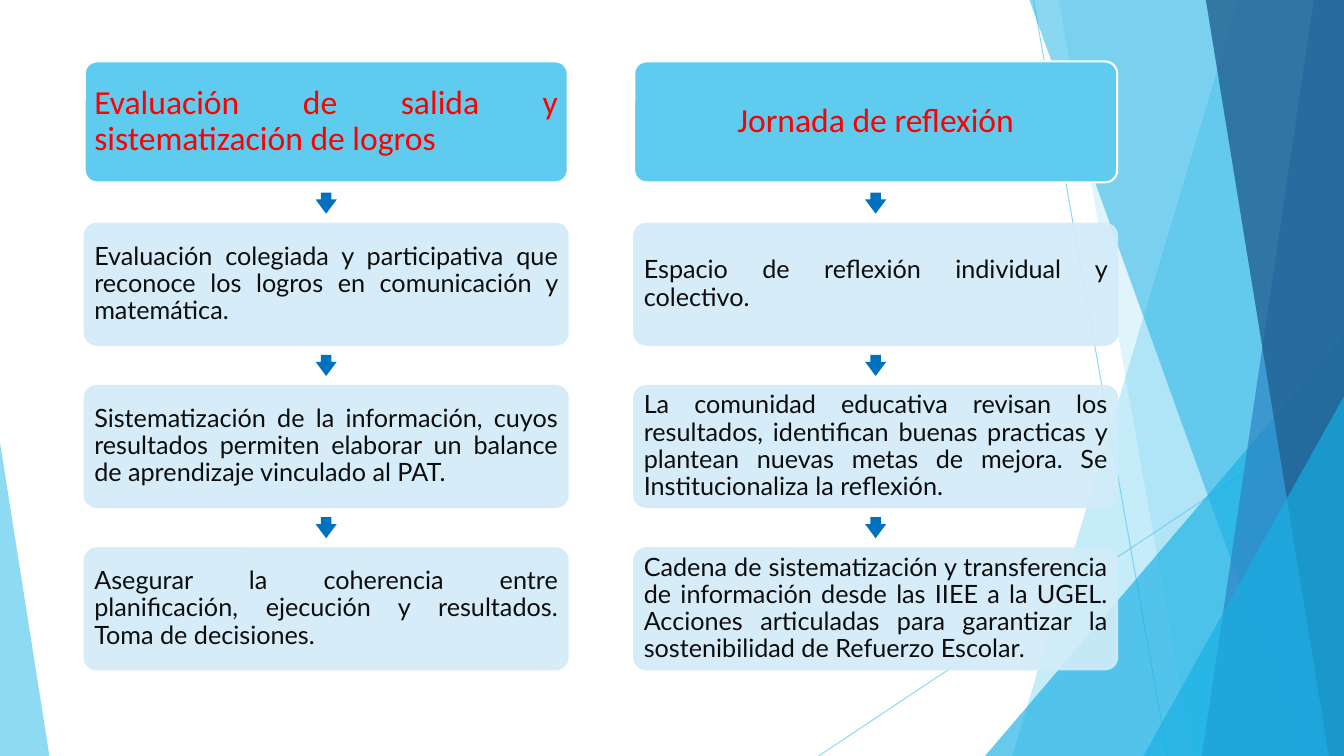
import pptx
import pptx.dml.color
import pptx.enum.shapes
import pptx.enum.text
import pptx.oxml
import pptx.oxml.ns
import pptx.util
from dataclasses import dataclass

Inches, Pt = pptx.util.Inches, pptx.util.Pt
SHAPE = pptx.enum.shapes.MSO_SHAPE
ALIGN = pptx.enum.text.PP_ALIGN


@dataclass(frozen=True)
class Theme:
    sky: str = "5FCBEF"
    cyan: str = "17B0E4"
    blue: str = "2E83C3"
    navy: str = "226292"
    pale: str = "D2ECF9"
    white: str = "FFFFFF"
    arrow: str = "0070C0"
    head_text: str = "FF0000"
    body_text: str = "0D0D0D"
    head_font: str = "Calibri"
    body_font: str = "Lato"
    head_size: int = 24
    body_size: int = 18


class SlideBuilder:
    def __init__(self, s, theme):
        self.s, self.theme = s, theme

    def paint(self, fill, color, opacity=100):
        """Apply a solid colour with opacity in percent."""
        fill.solid()
        fill.fore_color.rgb = pptx.dml.color.RGBColor.from_string(color)
        if opacity < 100:
            clr = fill._xPr.find(".//" + pptx.oxml.ns.qn("a:srgbClr"))
            alpha = clr.makeelement(pptx.oxml.ns.qn("a:alpha"), {"val": str(opacity * 1000)})
            clr.append(alpha)

    def finish(self, sp, color, opacity=100):
        sp.shadow.inherit = False
        self.paint(sp.fill, color, opacity)
        sp.line.fill.background()
        return sp

    def line(self, start, end):
        ends = [Inches(v) for v in (*start, *end)]
        c = self.s.shapes.add_connector(pptx.enum.shapes.MSO_CONNECTOR.STRAIGHT, *ends)
        c.line.width = Pt(0.75)
        self.paint(c.line.fill, self.theme.sky, 70)
        spPr = c._element.spPr
        spPr.append(spPr.makeelement(pptx.oxml.ns.qn("a:effectLst"), {}))

    def polygon(self, points, color, opacity):
        pts = [(Inches(x), Inches(y)) for x, y in points]
        fb = self.s.shapes.build_freeform(*pts[0])
        fb.add_line_segments(pts[1:], close=True)
        self.finish(fb.convert_to_shape(), color, opacity)

    def preset(self, kind, box, adjustments, color, opacity=100):
        sp = self.s.shapes.add_shape(kind, *[Inches(v) for v in box])
        for i, value in enumerate(adjustments):
            sp.adjustments[i] = value
        return self.finish(sp, color, opacity)

    def card(self, box, text, heading, align):
        t = self.theme
        color, opacity, edge = (t.sky, 100, t.white) if heading else (t.pale, 90, t.pale)
        sp = self.preset(SHAPE.ROUNDED_RECTANGLE, box, [0.1], color, opacity)
        sp.line.width = Pt(1.5)
        self.paint(sp.line.fill, edge, opacity)
        tf = sp.text_frame
        tf.word_wrap = True
        tf.vertical_anchor = pptx.enum.text.MSO_ANCHOR.MIDDLE
        tf.margin_left = tf.margin_right = Inches(0.06)
        tf.margin_top = tf.margin_bottom = Inches(0.03)
        p = tf.paragraphs[0]
        p.text = text
        p.alignment = align
        p.line_spacing = 0.9
        p.font.name = t.head_font if heading else t.body_font
        p.font.size = Pt(t.head_size if heading else t.body_size)
        p.font.color.rgb = pptx.dml.color.RGBColor.from_string(
            t.head_text if heading else t.body_text)

    def backdrop(self):
        t = self.theme
        right, bottom = 13.33, 7.5
        self.line((10.25, 0), (11.58, bottom))
        self.line((right, 4.03), (8.12, bottom))

        def band(top_x, bottom_x, color, opacity):
            """Fill from a slanted left edge to the right side of the slide."""
            self.polygon([(top_x, 0), (right, 0), (right, bottom), (bottom_x, bottom)],
                         color, opacity)

        def corner(left, top, width, apex, color, opacity):
            self.preset(SHAPE.ISOSCELES_TRIANGLE, (left, top, width, bottom - top),
                        [apex], color, opacity)

        band(12.28, 10.04, t.sky, 36)
        band(10.5, 11.83, t.sky, 20)
        corner(9.77, 3.33, 3.56, 1, t.cyan, 66)
        band(10.21, 12.91, t.cyan, 50)
        band(13.03, 11.92, t.blue, 70)
        band(11.96, 13.18, t.navy, 80)
        corner(11.34, 3.93, 1.99, 1, t.cyan, 66)
        corner(0, 4.39, 0.49, 0, t.sky, 70)

    def flow(self, left, texts, head_align):
        """Stack a heading and its steps, joined by down arrows."""
        top, pitch, width, height, arrow = 0.61, 1.61, 4.79, 1.2, 0.21
        for i, text in enumerate(texts):
            y = top + i * pitch
            if i:
                gap = pitch - height
                self.preset(SHAPE.DOWN_ARROW,
                            (left + (width - arrow) / 2, y - (gap + arrow) / 2, arrow, arrow),
                            [0.5, 0.67], self.theme.arrow)
            self.card((left, y, width, height), text, i == 0,
                      ALIGN.JUSTIFY if i else head_align)


FLOWS = [
    (0.84, ALIGN.JUSTIFY, [
        "Evaluación de salida y sistematización de logros",
        "Evaluación colegiada y participativa que reconoce los logros en comunicación "
        "y matemática.",
        "Sistematización de la información, cuyos resultados permiten elaborar un balance "
        "de aprendizaje vinculado al PAT.",
        "Asegurar la coherencia entre planificación, ejecución y resultados. "
        "Toma de decisiones.",
    ]),
    (6.29, ALIGN.CENTER, [
        "Jornada de reflexión",
        "Espacio de reflexión individual y colectivo.",
        "La comunidad educativa revisan los resultados, identifican buenas practicas y "
        "plantean nuevas metas de mejora. Se Institucionaliza la reflexión.",
        "Cadena de sistematización y transferencia de información desde las IIEE a la UGEL. "
        "Acciones articuladas para garantizar la sostenibilidad de Refuerzo Escolar.",
    ]),
]


def main():
    prs = pptx.Presentation()
    prs.slide_width, prs.slide_height = Inches(13.33), Inches(7.5)
    builder = SlideBuilder(prs.slides.add_slide(prs.slide_layouts[6]), Theme())
    builder.backdrop()
    for left, head_align, texts in FLOWS:
        builder.flow(left, texts, head_align)
    prs.save("out.pptx")


if __name__ == "__main__":
    main()
